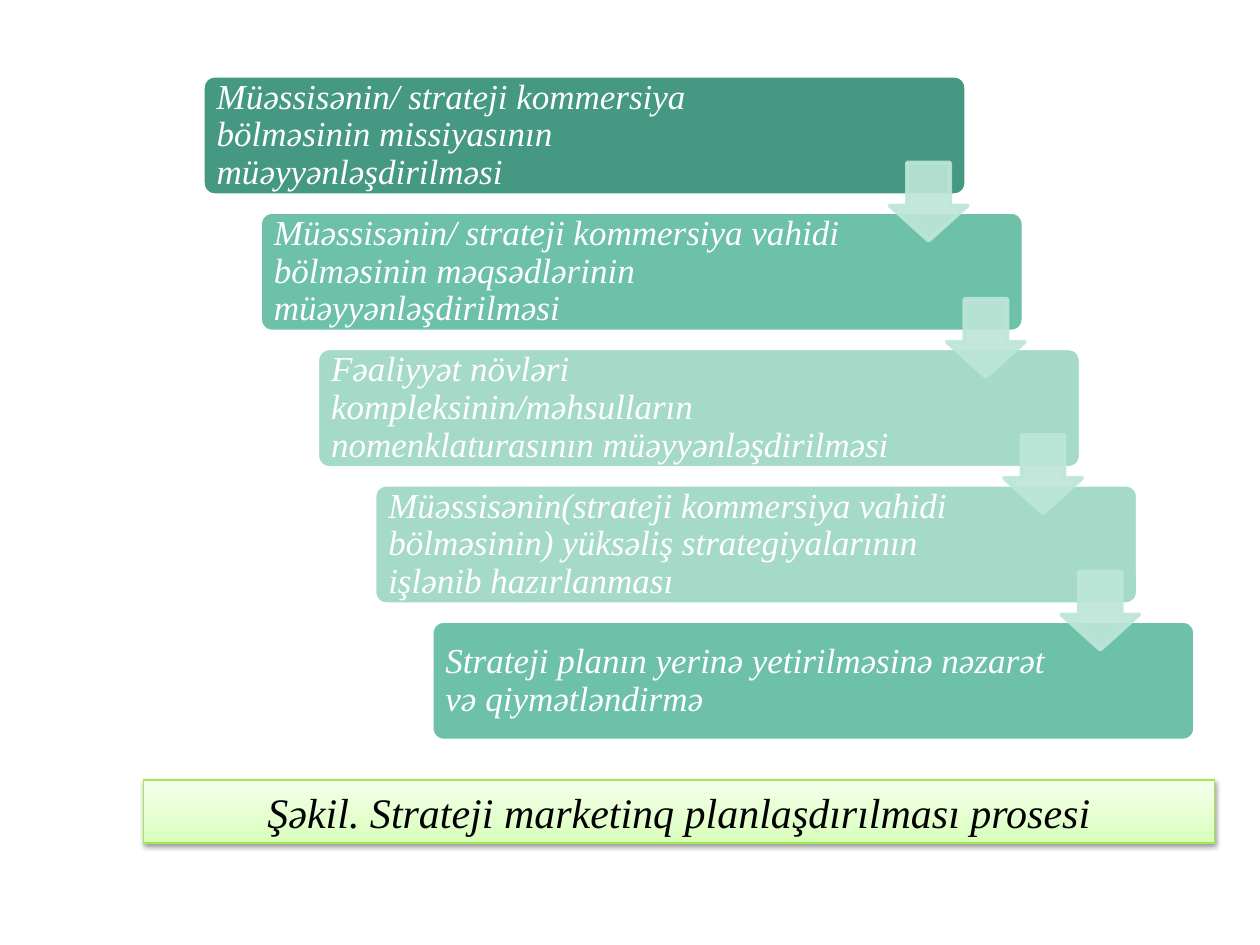
from dataclasses import dataclass

from lxml import etree
from pptx import Presentation
from pptx.dml.color import RGBColor
from pptx.enum.shapes import MSO_SHAPE
from pptx.enum.text import MSO_ANCHOR, PP_ALIGN
from pptx.oxml.ns import qn
from pptx.util import Inches, Pt

ROUNDED = MSO_SHAPE.ROUNDED_RECTANGLE
DOWN_ARROW = MSO_SHAPE.DOWN_ARROW
RECTANGLE = MSO_SHAPE.RECTANGLE
MIDDLE = MSO_ANCHOR.MIDDLE
CENTER = PP_ALIGN.CENTER


@dataclass(frozen=True)
class Theme:
    font: str = "Times New Roman"
    step_size: int = 20
    caption_size: int = 24
    white: str = "FFFFFF"
    black: str = "000000"
    dark: str = "459881"
    medium: str = "6DC1A8"
    light: str = "A5DAC9"
    arrow: str = "BDE6D8"
    arrow_opacity: int = 90
    caption_line: str = "A4E94C"
    caption_stops: tuple = ((0, "D8FFB8"), (35, "E3FFCD"), (100, "F4FFEC"))


@dataclass(frozen=True)
class Step:
    text: str
    color: str


THEME = Theme()
STEPS = (
    Step("Müəssisənin/ strateji kommersiya bölməsinin missiyasının "
         "müəyyənləşdirilməsi", THEME.dark),
    Step("Müəssisənin/ strateji kommersiya vahidi bölməsinin məqsədlərinin "
         "müəyyənləşdirilməsi", THEME.medium),
    Step("Fəaliyyət növləri kompleksinin/məhsulların nomenklaturasının "
         "müəyyənləşdirilməsi", THEME.light),
    Step("Müəssisənin(strateji kommersiya vahidi bölməsinin) yüksəliş "
         "strategiyalarının işlənib hazırlanması", THEME.light),
    Step("Strateji planın yerinə yetirilməsinə nəzarət və qiymətləndirmə",
         THEME.medium),
)
CAPTION = "Şəkil. Strateji marketinq planlaşdırılması prosesi"

STEP_LEFT, STEP_TOP, STEP_WIDTH, STEP_HEIGHT = 1.61, 0.6, 6.06, 0.95
SHIFT_X, SHIFT_Y = 0.454, 1.082
TEXT_INSET, TEXT_WIDTH = 0.03, 4.94
ARROW_LEFT, ARROW_TOP, ARROW_SIZE = 7.06, 1.29, 0.62


def add_filled_shape(slide, preset, left: float, top: float, width: float,
                     height: float, fill: str, line: str, line_width: float):
    shape = slide.shapes.add_shape(preset, Inches(left), Inches(top),
                                   Inches(width), Inches(height))
    shape.shadow.inherit = False
    shape.fill.solid()
    shape.fill.fore_color.rgb = RGBColor.from_string(fill)
    shape.line.color.rgb = RGBColor.from_string(line)
    shape.line.width = Pt(line_width)
    return shape


def style_paragraph(paragraph, text: str, size: int, color: str) -> None:
    paragraph.text = text
    font = paragraph.font
    font.name, font.size, font.italic = THEME.font, Pt(size), True
    font.color.rgb = RGBColor.from_string(color)


def add_color(parent, color: str, opacity: int = 100) -> None:
    element = etree.SubElement(parent, qn("a:srgbClr"), val=color)
    if opacity < 100:
        etree.SubElement(element, qn("a:alpha"), val=str(opacity * 1000))


def add_step(slide, step: Step, index: int) -> None:
    left = STEP_LEFT + index * SHIFT_X
    top = STEP_TOP + index * SHIFT_Y
    box = add_filled_shape(slide, ROUNDED, left, top, STEP_WIDTH, STEP_HEIGHT,
                           step.color, THEME.white, 2.25)
    box.adjustments[0] = 0.1

    label = slide.shapes.add_textbox(
        Inches(left + TEXT_INSET), Inches(top + TEXT_INSET),
        Inches(TEXT_WIDTH), Inches(STEP_HEIGHT - 2 * TEXT_INSET))
    frame = label.text_frame
    frame.word_wrap = True
    frame.vertical_anchor = MIDDLE
    frame.margin_left = frame.margin_right = Inches(0.08)
    frame.margin_top = frame.margin_bottom = Inches(0.08)
    paragraph = frame.paragraphs[0]
    paragraph.line_spacing = 0.9
    style_paragraph(paragraph, step.text, THEME.step_size, THEME.white)


def add_arrow(slide, index: int) -> None:
    arrow = add_filled_shape(
        slide, DOWN_ARROW, ARROW_LEFT + index * SHIFT_X,
        ARROW_TOP + index * SHIFT_Y, ARROW_SIZE, ARROW_SIZE,
        THEME.arrow, THEME.arrow, 2.25)
    arrow.adjustments[0] = 0.55
    arrow.adjustments[1] = 0.45
    properties = arrow.element.spPr
    for solid_fill in list(properties.iter(qn("a:solidFill"))):
        solid_fill.clear()
        add_color(solid_fill, THEME.arrow, THEME.arrow_opacity)


def add_caption(slide) -> None:
    caption = add_filled_shape(slide, RECTANGLE, 1.14, 6.19, 8.5, 0.5,
                               THEME.white, THEME.caption_line, 0.75)
    caption.fill.gradient()
    caption.fill.gradient_angle = 90
    properties = caption.element.spPr
    stops = properties.find(".//" + qn("a:gsLst"))
    stops.clear()
    for position, color in THEME.caption_stops:
        stop = etree.SubElement(stops, qn("a:gs"), pos=str(position * 1000))
        add_color(stop, color)

    shadow = etree.SubElement(
        properties.find(qn("a:effectLst")), qn("a:outerShdw"),
        blurRad=str(Pt(3.1)), dist=str(Pt(1.6)), dir="5400000",
        rotWithShape="0")
    add_color(shadow, THEME.black, 38)

    frame = caption.text_frame
    frame.word_wrap = True
    paragraph = frame.paragraphs[0]
    paragraph.alignment = CENTER
    style_paragraph(paragraph, CAPTION, THEME.caption_size, THEME.black)


def main() -> None:
    presentation = Presentation()
    presentation.slide_width = Inches(10)
    presentation.slide_height = Inches(7.5)
    slide = presentation.slides.add_slide(presentation.slide_layouts[6])
    for index, step in enumerate(STEPS):
        add_step(slide, step, index)
    for index in range(len(STEPS) - 1):
        add_arrow(slide, index)
    add_caption(slide)
    presentation.save("out.pptx")


if __name__ == "__main__":
    main()
